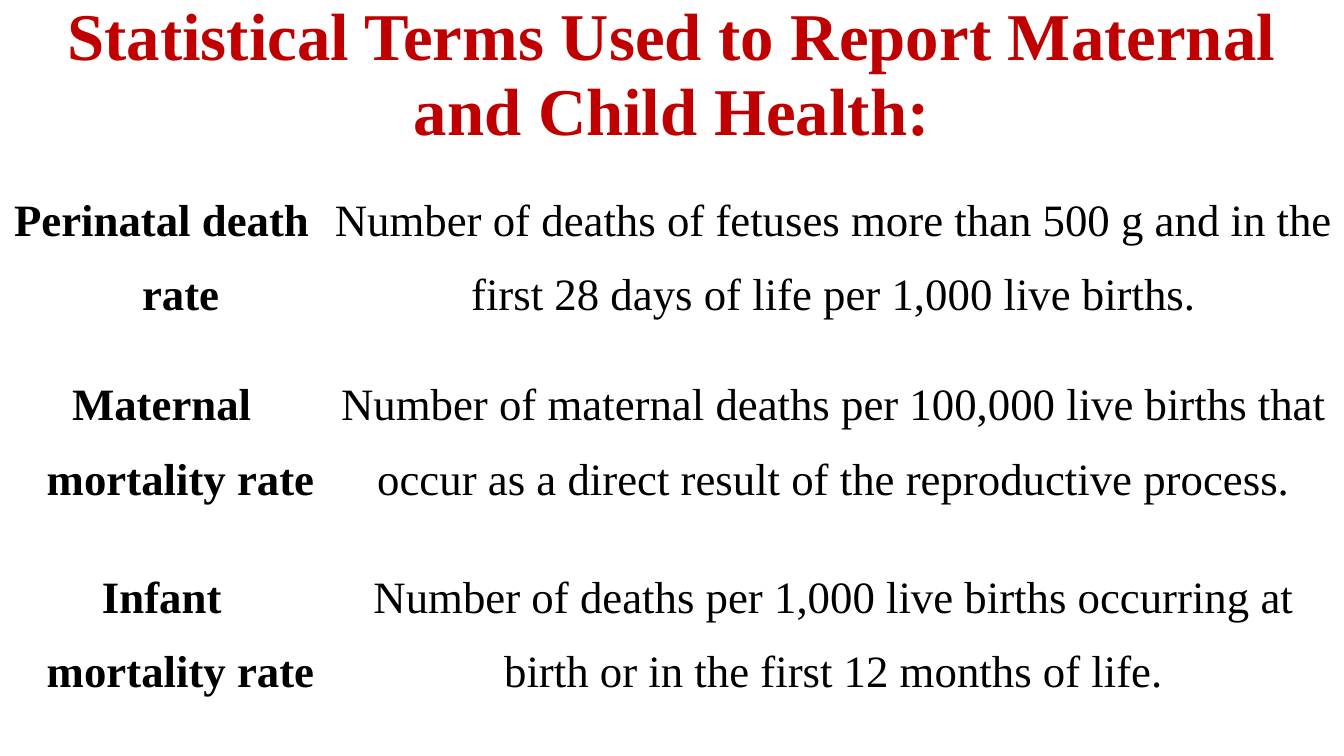
"""Build a slide defining statistical terms for maternal and child health."""
import pptx
import pptx.util
import pptx.dml.color
import pptx.enum.text

Cm = pptx.util.Cm
CENTER = pptx.enum.text.PP_ALIGN.CENTER


def add_text(p, text, size, color, bold, spacing):
    p.alignment = CENTER
    p.line_spacing = spacing
    r = p.add_run()
    r.text = text
    r.font.name = "Times New Roman"
    r.font.size = pptx.util.Pt(size)
    r.font.bold = bold
    r.font.color.rgb = pptx.dml.color.RGBColor.from_string(color)


terms = [
    ("Perinatal death rate",
     "Number of deaths of fetuses more than 500 g and in the first 28 days of life per 1,000 live births."),
    ("Maternal mortality rate",
     "Number of maternal deaths per 100,000 live births that occur as a direct result of the reproductive process."),
    ("Infant mortality rate",
     "Number of deaths per 1,000 live births occurring at birth or in the first 12 months of life."),
]
col_widths = [Cm(8.15), Cm(25.71)]
row_heights = [Cm(4.65), Cm(4.85), Cm(6.17)]

prs = pptx.Presentation()
prs.slide_width = Cm(33.86)
prs.slide_height = Cm(19.05)
s = prs.slides.add_slide(prs.slide_layouts[5])

title = s.shapes.title
title.left, title.top, title.width, title.height = 0, 0, prs.slide_width, Cm(3.8)
tf = title.text_frame
tf.word_wrap = True
tf.auto_size = pptx.enum.text.MSO_AUTO_SIZE.NONE
tf.vertical_anchor = pptx.enum.text.MSO_ANCHOR.MIDDLE
add_text(tf.paragraphs[0], "Statistical Terms Used to Report Maternal and Child Health:",
         47.7, "C00000", True, 0.93)

table = s.shapes.add_table(len(terms), 2, 0, Cm(4.32), sum(col_widths), sum(row_heights)).table
table.first_row = False
table.horz_banding = False
for column, width in zip(table.columns, col_widths):
    column.width = width
for row, height, texts in zip(table.rows, row_heights, terms):
    row.height = height
    for i, (cell, text) in enumerate(zip(row.cells, texts)):
        is_term = i == 0
        cell.fill.background()
        cell.margin_left = cell.margin_right = Cm(0.18)
        cell.margin_top = cell.margin_bottom = 0
        p = cell.text_frame.paragraphs[0]
        add_text(p, text, 32, "000000", is_term, 1.5)
        if is_term:
            pPr = p._p.get_or_add_pPr()
            pPr.set("marL", str(Cm(0.95)))
            pPr.set("indent", str(-Cm(0.95)))

prs.save("out.pptx")
